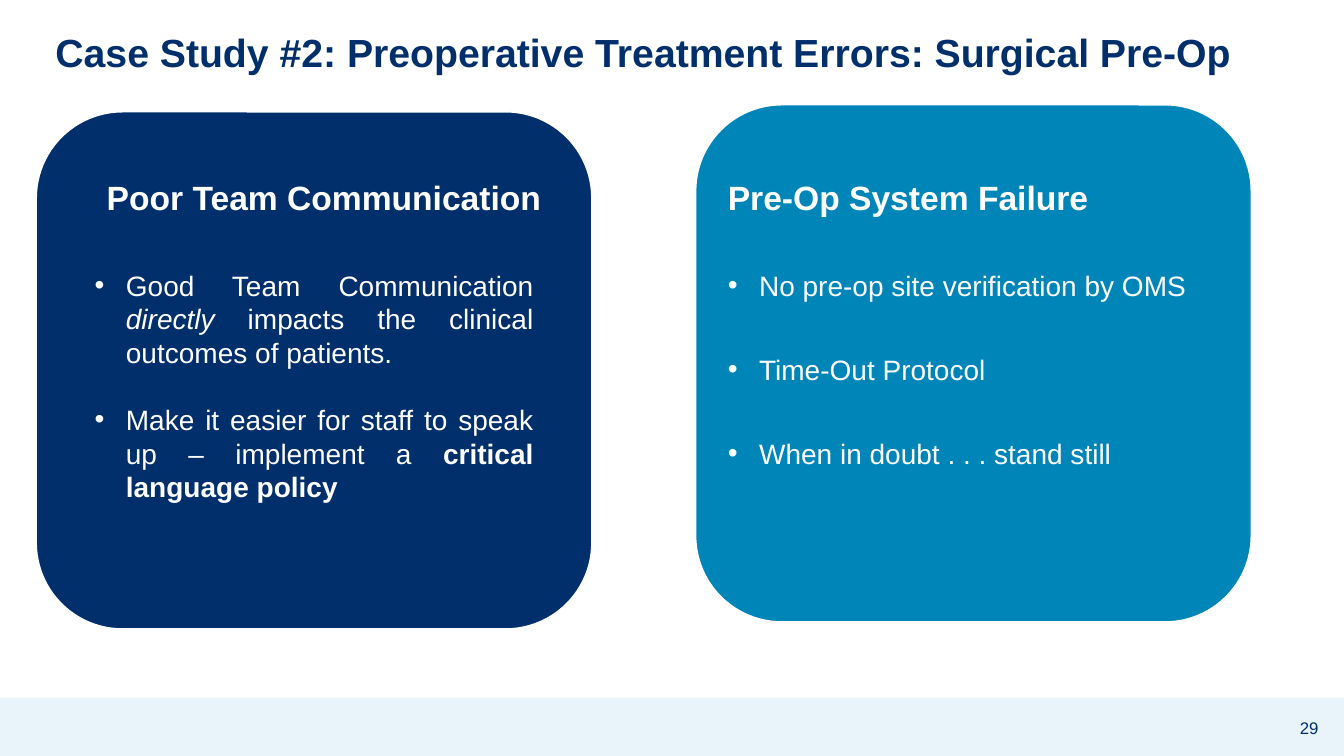
from pptx import Presentation
from pptx.dml.color import RGBColor
from pptx.enum import shapes, text
from pptx.oxml.ns import qn
from pptx.util import Inches, Pt
from lxml import etree

TITLE = "Case Study #2: Preoperative Treatment Errors: Surgical Pre-Op"
PAGE_NUMBER = "29"
CARDS = [
    {"color": "navy", "at": (0.36, 1.11), "texts": [
        {"at": (0.96, 1.71, 4.55, 0.81), "heading": "Poor Team Communication", "bullets": [], "gap": 0},
        {"at": (0.84, 2.61, 4.55, 2.76), "heading": None, "gap": 24, "bullets": [
            [("Good Team Communication ", {}), ("directly", {"italic": True}),
             (" impacts the clinical outcomes of patients.", {})],
            [("Make it easier for staff to speak up – implement a ", {}),
             ("critical language policy", {"bold": True})],
        ]},
    ]},
    {"color": "blue", "at": (6.9, 1.04), "texts": [
        {"at": (7.12, 1.71, 5.18, 3.42), "heading": "Pre-Op System Failure", "gap": 36, "bullets": [
            [("No pre-op site verification by OMS", {})],
            [("Time-Out Protocol", {})],
            [("When in doubt . . . stand still", {})],
        ]},
    ]},
]
THEME = {
    "font": "Arial", "navy": "002F6B", "blue": "0085B8", "white": "FFFFFF", "band": "E8F4FA",
    "title": 28, "heading": 24, "body": 20, "number": 12,
}
SLIDE_SIZE = (13.33, 7.5)
CARD_SIZE = (5.51, 5.13)
BULLET_INDENT = 0.31
LINE_FACTOR = 1.2


def color(name):
    """Return a theme colour."""
    return RGBColor.from_string(THEME[name])


def place(shape, box):
    """Move and size a shape in inches."""
    for name, value in zip(("left", "top", "width", "height"), box):
        setattr(shape, name, Inches(value))


def add_run(paragraph, words, size, color_name, **styles):
    """Add a formatted run."""
    run = paragraph.add_run()
    run.text = words
    values = {"name": THEME["font"], "size": Pt(THEME[size]), "bold": False, **styles}
    for name, value in values.items():
        setattr(run.font, name, value)
    run.font.color.rgb = color(color_name)


def add_panel(slide, kind, box, fill, outline=None):
    """Add a filled shape."""
    shape = slide.shapes.add_shape(kind, *map(Inches, box))
    shape.shadow.inherit = False
    shape.fill.solid()
    shape.fill.fore_color.rgb = color(fill)
    if outline:
        shape.line.color.rgb = color(outline)
        shape.line.width = Pt(1)
    else:
        shape.line.fill.background()


def add_text_frame(slide, box):
    """Add a wrapping text box and return its frame."""
    frame = slide.shapes.add_textbox(*map(Inches, box)).text_frame
    frame.word_wrap = True
    return frame


def make_bullet(paragraph):
    """Give a paragraph a hanging bullet."""
    properties = paragraph._p.get_or_add_pPr()
    indent = Inches(BULLET_INDENT)
    properties.set("marL", str(indent))
    properties.set("indent", str(-indent))
    etree.SubElement(properties, qn("a:buFont"), typeface=THEME["font"])
    etree.SubElement(properties, qn("a:buChar"), char="•")


def add_card_text(slide, block):
    """Write an optional heading and evenly spaced bullets."""
    frame = add_text_frame(slide, block["at"])
    heading = block["heading"]
    entries = [("heading", [(heading, {"bold": True})])] if heading else []
    entries += [("body", runs) for runs in block["bullets"]]
    for index, (size, runs) in enumerate(entries):
        paragraph = frame.add_paragraph() if index else frame.paragraphs[0]
        if size == "body":
            make_bullet(paragraph)
        paragraph.alignment = text.PP_ALIGN.JUSTIFY
        paragraph.line_spacing = Pt(THEME[size] * LINE_FACTOR)
        if index:
            paragraph.space_before = Pt(block["gap"])
        for words, styles in runs:
            add_run(paragraph, words, size, "white", **styles)


def main():
    """Build the case study slide."""
    presentation = Presentation()
    presentation.slide_width, presentation.slide_height = map(Inches, SLIDE_SIZE)
    slide = presentation.slides.add_slide(presentation.slide_layouts[5])

    add_panel(slide, shapes.MSO_SHAPE.RECTANGLE, (0, 6.92, SLIDE_SIZE[0], 0.58), "band")

    title = slide.shapes.title
    place(title, (0.45, 0.15, 12.09, 0.78))
    title.text_frame.vertical_anchor = text.MSO_ANCHOR.MIDDLE
    paragraph = title.text_frame.paragraphs[0]
    paragraph.alignment = text.PP_ALIGN.LEFT
    paragraph.line_spacing = 0.9
    add_run(paragraph, TITLE, "title", "navy", bold=True)

    number = add_text_frame(slide, (12.68, 7.02, 0.61, 0.4))
    number.vertical_anchor = text.MSO_ANCHOR.MIDDLE
    number.paragraphs[0].alignment = text.PP_ALIGN.CENTER
    add_run(number.paragraphs[0], PAGE_NUMBER, "number", "navy")

    for card in CARDS:
        add_panel(slide, shapes.MSO_SHAPE.ROUNDED_RECTANGLE, card["at"] + CARD_SIZE, card["color"], "white")
        for block in card["texts"]:
            add_card_text(slide, block)

    presentation.save("out.pptx")


if __name__ == "__main__":
    main()
